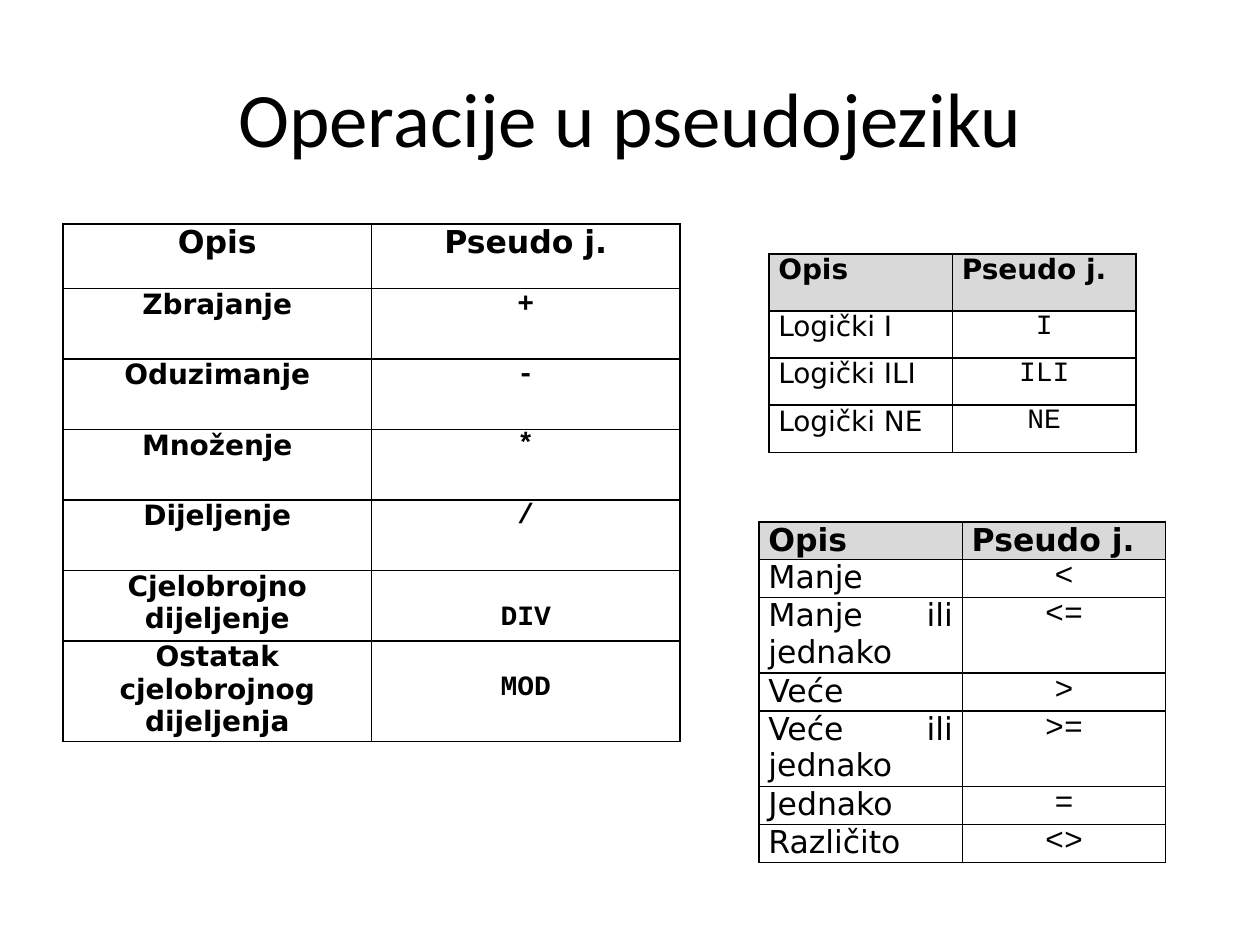
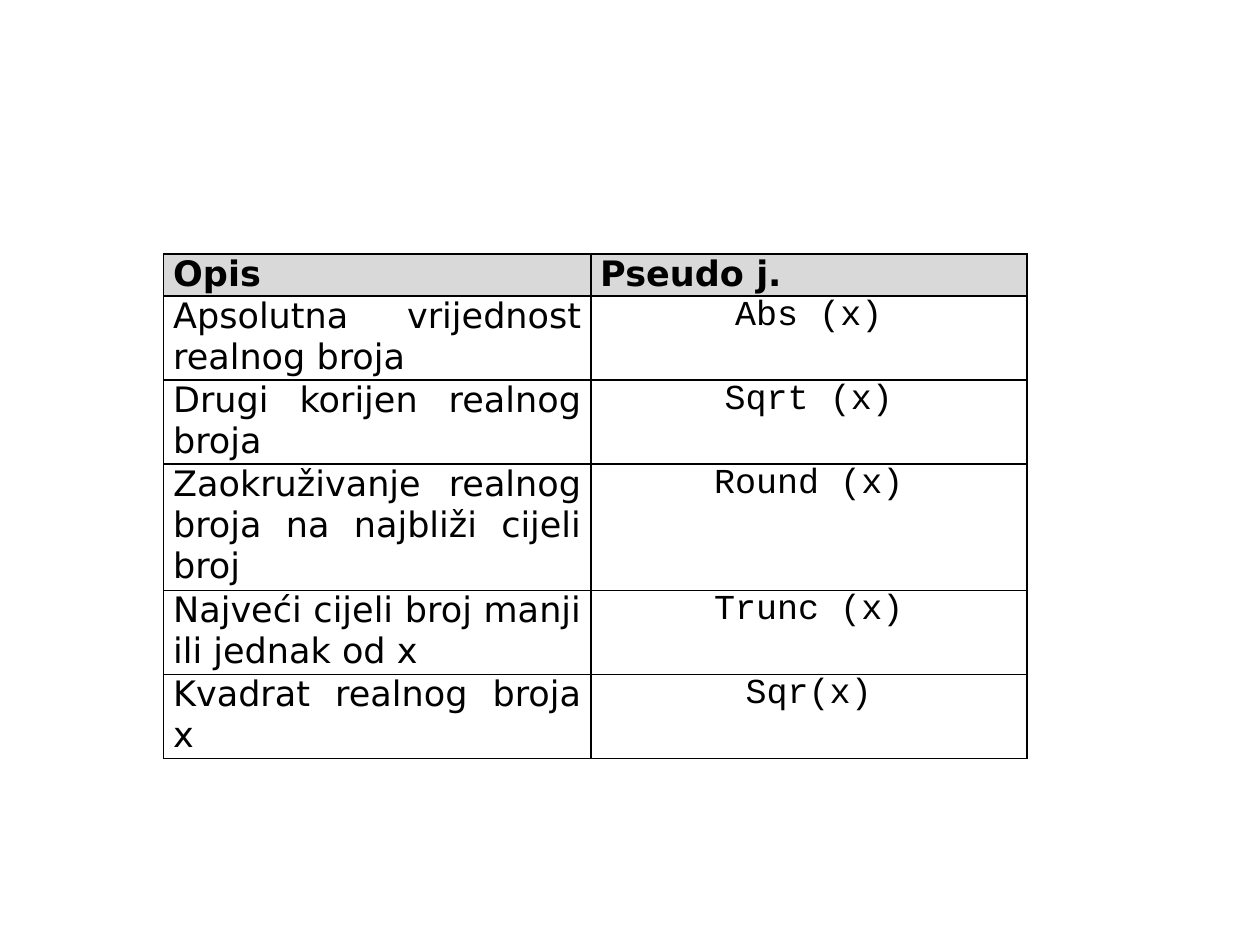
from lxml import etree
from pptx import Presentation
from pptx.dml.color import RGBColor
from pptx.enum.text import MSO_ANCHOR, PP_ALIGN
from pptx.util import Cm, Pt

CENTER, JUSTIFY = PP_ALIGN.CENTER, PP_ALIGN.JUSTIFY
MIDDLE = MSO_ANCHOR.MIDDLE
COLORS = {"text": "000000", "border": "000000", "header": "D9D9D9", "paper": "FFFFFF"}
TITLE_FONT, TEXT_FONT, CODE_FONT = "Calibri", "DejaVu Sans", "Courier New"
NS = "http://schemas.openxmlformats.org/drawingml/2006/main"
HEADER = ("Opis", "Pseudo j.")


def format_text(p, font, size, bold, align):
    p.alignment = align
    for r in p.runs:
        r.font.name = font
        r.font.size = Pt(size)
        r.font.bold = bold
        r.font.color.rgb = RGBColor.from_string(COLORS["text"])


def add_grid(slide, left, top, widths, heights, rows, size, head_size=None, centered=False):
    """Two-column table; centered gives the bold variant on a plain white fill."""
    table = slide.shapes.add_table(len(rows) + 1, 2, Cm(left), Cm(top),
                                   Cm(sum(widths)), Cm(sum(heights))).table
    table.first_row = table.horz_banding = False
    for column, width in zip(table.columns, widths):
        column.width = Cm(width)
    for i, (row, height) in enumerate(zip([HEADER] + rows, heights)):
        table.rows[i].height = Cm(height)
        is_head = i == 0
        for j, text in enumerate(row):
            cell = table.cell(i, j)
            is_code = j == 1 and not is_head
            cell.margin_left = cell.margin_right = Cm(0.19)
            cell.margin_top = cell.margin_bottom = 0
            # Long codes in the centered table sit one line lower
            if centered and is_code and len(text) > 1:
                cell.margin_top = Cm(0.64)

            # Borders come before the fill
            tc_pr = cell._tc.get_or_add_tcPr()
            for side in ("lnL", "lnR", "lnT", "lnB"):
                ln = etree.SubElement(tc_pr, f"{{{NS}}}{side}", w=str(Pt(1)))
                fill = etree.SubElement(ln, f"{{{NS}}}solidFill")
                etree.SubElement(fill, f"{{{NS}}}srgbClr", val=COLORS["border"])
            if centered or is_head:
                cell.fill.solid()
                color = COLORS["paper" if centered else "header"]
                cell.fill.fore_color.rgb = RGBColor.from_string(color)
            else:
                cell.fill.background()

            cell.text_frame.text = text
            format_text(cell.text_frame.paragraphs[0],
                        CODE_FONT if is_code else TEXT_FONT,
                        head_size if is_head and head_size else size,
                        centered or is_head,
                        CENTER if centered or is_code else JUSTIFY)


prs = Presentation()
prs.slide_width, prs.slide_height = Cm(25.4), Cm(19.05)
blank = prs.slide_layouts[6]

# Slide 1: title
s = prs.slides.add_slide(blank)
tf = s.shapes.add_textbox(Cm(1.27), Cm(0.76), Cm(22.86), Cm(3.18)).text_frame
tf.word_wrap = True
tf.vertical_anchor = MIDDLE
tf.text = "Operacije u pseudojeziku"
format_text(tf.paragraphs[0], TITLE_FONT, 44, False, CENTER)

# Slide 1: arithmetic operators
arithmetic = [
    ("Zbrajanje", "+"),
    ("Oduzimanje", "-"),
    ("Množenje", "*"),
    ("Dijeljenje", "/"),
    ("Cjelobrojno dijeljenje", "DIV"),
    ("Ostatak cjelobrojnog dijeljenja", "MOD"),
]
add_grid(s, 1.27, 4.52, [6.22] * 2, [1.3] + [1.42] * 5 + [1.96], arithmetic,
         16, head_size=18, centered=True)

# Slide 1: logical operators
logical = [("Logički I", "I"), ("Logički ILI", "ILI"), ("Logički NE", "NE")]
add_grid(s, 15.5, 5.12, [3.7] * 2, [1.15] + [0.95] * 3, logical, 16)

# Slide 1: comparison operators, row height follows the number of lines
comparison = [
    ("Manje", "<"),
    ("Manje ili jednako", "<="),
    ("Veće", ">"),
    ("Veće ili jednako", ">="),
    ("Jednako", "="),
    ("Različito", "<>"),
]
add_grid(s, 15.3, 10.52, [4.1] * 2, [0.73 * n for n in (1, 1, 2, 1, 2, 1, 1)],
         comparison, 18)

# Slide 2: functions
s = prs.slides.add_slide(blank)
functions = [
    ("Apsolutna vrijednost realnog broja", "Abs (x)"),
    ("Drugi korijen realnog broja", "Sqrt (x)"),
    ("Zaokruživanje realnog broja na najbliži cijeli broj", "Round (x)"),
    ("Najveći cijeli broj manji ili jednak od x", "Trunc (x)"),
    ("Kvadrat realnog broja x", "Sqr(x)"),
]
add_grid(s, 3.3, 5.12, [8.61, 8.79], [0.82 * n for n in (1, 2, 2, 3, 2, 2)],
         functions, 20)

prs.save("out.pptx")
